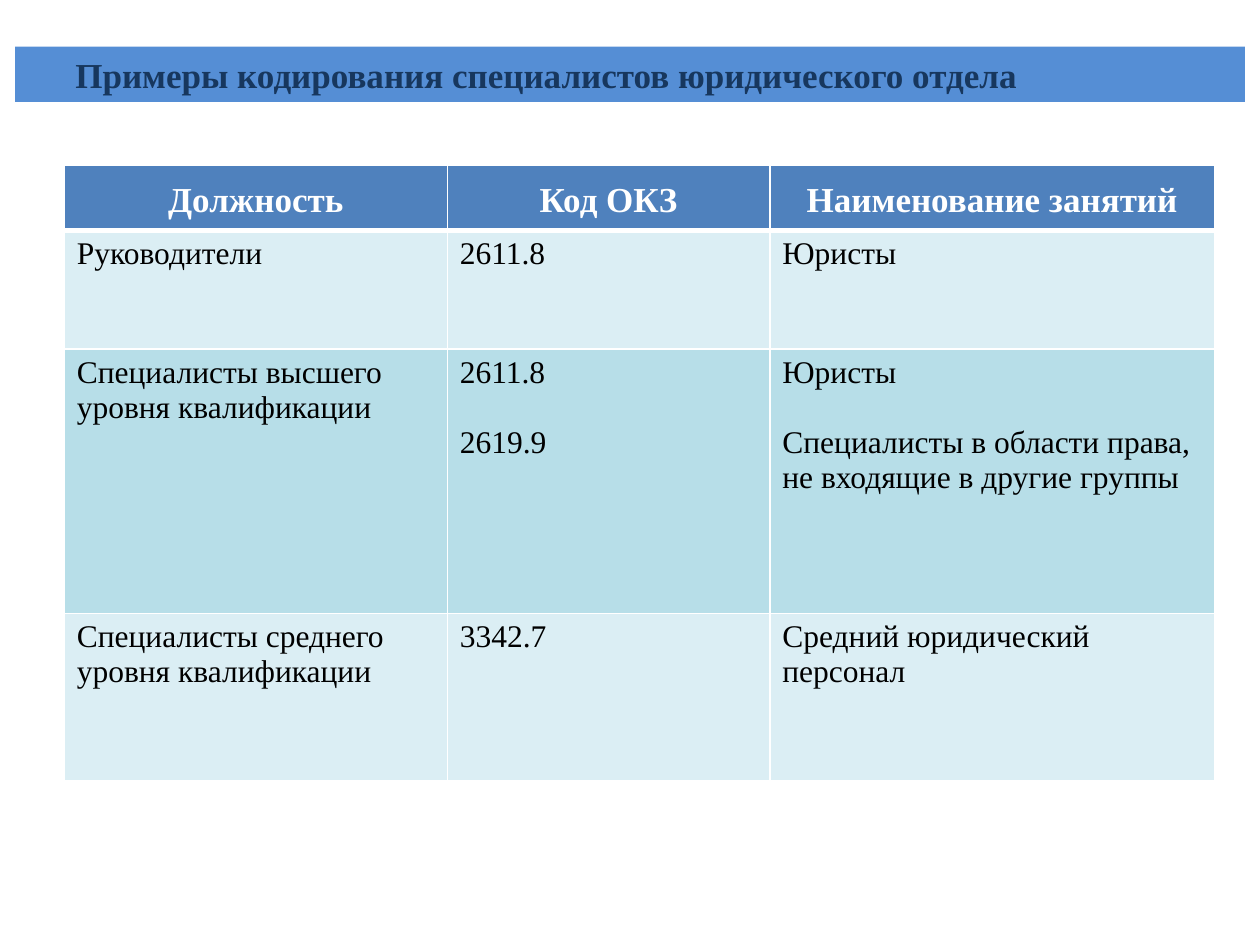
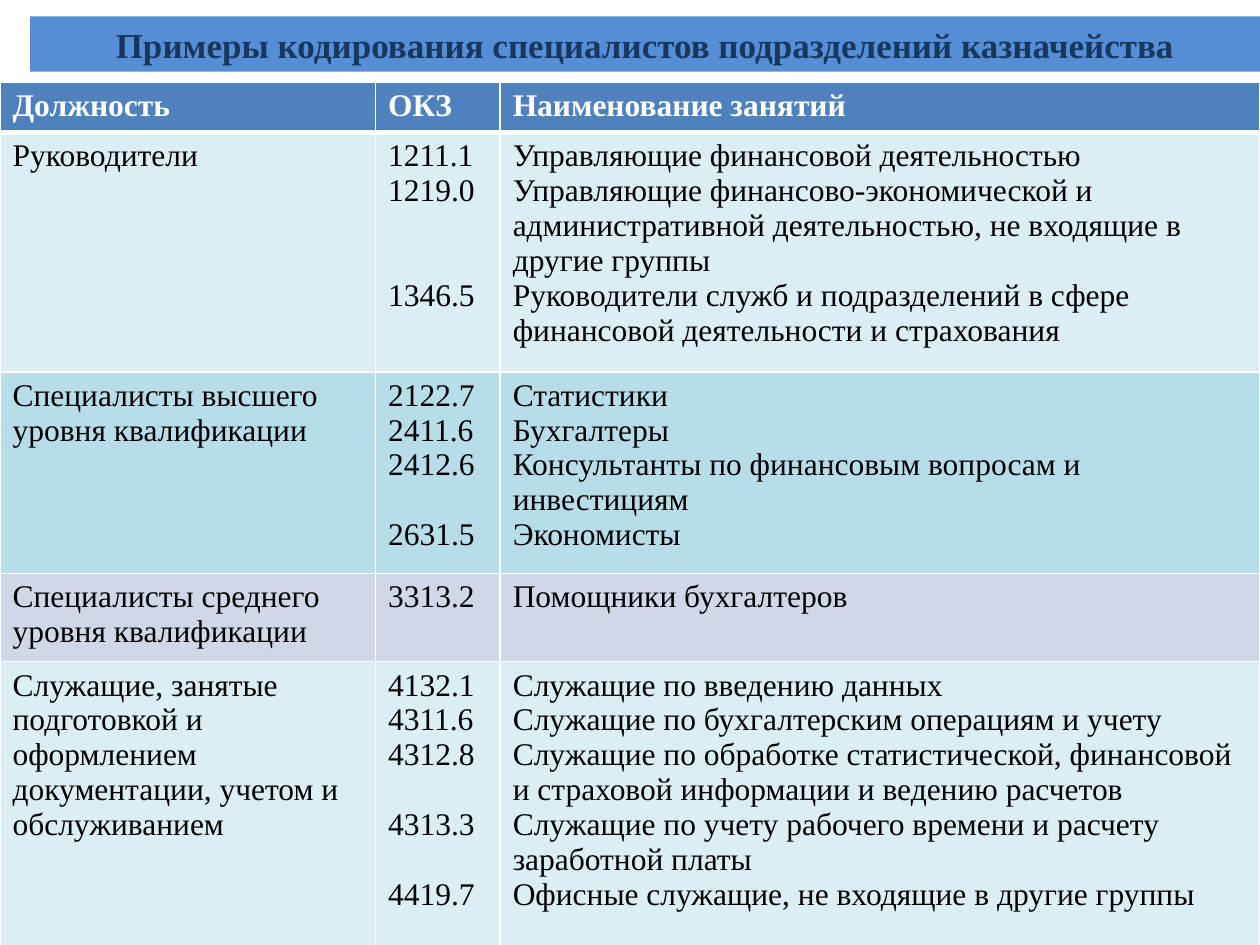
from lxml.etree import SubElement
from pptx import Presentation
from pptx.dml.color import RGBColor
from pptx.enum.shapes import MSO_SHAPE as Shape
from pptx.enum.text import MSO_ANCHOR as Anchor, MSO_AUTO_SIZE as AutoSize, PP_ALIGN as Align
from pptx.oxml.ns import qn
from pptx.util import Inches, Pt

FONT = "Times New Roman"
BAND, BAND_TEXT = "558ED5", "17375E"
HEADER, WHITE, BLACK = "4F81BD", "FFFFFF", "000000"
PALE, TEAL, LILAC = "DBEEF4", "B7DEE8", "D0D8E8"
BAND_SIZE = (9.76, 0.44)
LINE = 20  # height of one text line in points


def color(hex_code):
    return RGBColor.from_string(hex_code)


def write(frame, text, size, hex_code, bold=False):
    """One paragraph per line; an empty line becomes space before the next."""
    skipped, started = 0, False
    for line in text.split("\n"):
        if not line:
            skipped += 1
            continue
        para = frame.add_paragraph() if started else frame.paragraphs[0]
        para.text = line
        para.font.name, para.font.size, para.font.bold = FONT, Pt(size), bold
        para.font.color.rgb = color(hex_code)
        if skipped:
            para.space_before = Pt(LINE * skipped)
        skipped, started = 0, True


HIGHER = "Специалисты высшего уровня квалификации"
MIDDLE = "Специалисты среднего уровня квалификации"

slides = [
    {
        "title": "Примеры кодирования специалистов юридического отдела",
        "band_at": (0.12, 0.37), "title_indent": 0.38,
        "table_at": (0.51, 1.31), "centred_header": True, "header_size": 20,
        "columns": [3.04, 2.56, 3.53], "rows": [0.52, 0.94, 2.1, 1.33],
        "fills": [HEADER, PALE, TEAL, PALE],
        "cells": [
            ("Должность", "Код ОКЗ", "Наименование занятий"),
            ("Руководители", "2611.8", "Юристы"),
            (HIGHER, "2611.8\n\n2619.9",
             "Юристы\n\nСпециалисты в области права, не входящие в другие группы"),
            (MIDDLE, "3342.7", "Средний юридический персонал"),
        ],
    },
    {
        "title": "Примеры кодирования специалистов подразделений казначейства",
        "band_at": (0.24, 0.13), "title_indent": None,
        "table_at": (0, 0.65), "centred_header": False, "header_size": 18,
        "columns": [2.98, 0.99, 6.03], "rows": [0.39, 1.86, 1.56, 0.68, 2.26],
        "fills": [HEADER, PALE, TEAL, LILAC, PALE],
        "cells": [
            ("Должность", "ОКЗ", "Наименование занятий"),
            ("Руководители", "1211.1\n1219.0\n\n\n1346.5",
             "Управляющие финансовой деятельностью\n"
             "Управляющие финансово-экономической и административной деятельностью, "
             "не входящие в другие группы\n"
             "Руководители служб и подразделений в сфере финансовой деятельности "
             "и страхования"),
            (HIGHER, "2122.7\n2411.6\n2412.6\n\n2631.5",
             "Статистики\nБухгалтеры\n"
             "Консультанты по финансовым вопросам и инвестициям\nЭкономисты"),
            (MIDDLE, "3313.2", "Помощники бухгалтеров"),
            ("Служащие, занятые подготовкой и оформлением документации, "
             "учетом и обслуживанием",
             "4132.1\n4311.6\n4312.8\n\n4313.3\n\n4419.7",
             "Служащие по введению данных\n"
             "Служащие по бухгалтерским операциям и учету\n"
             "Служащие по обработке статистической, финансовой и страховой информации "
             "и ведению расчетов\n"
             "Служащие по учету рабочего времени и расчету заработной платы\n"
             "Офисные служащие, не входящие в другие группы"),
        ],
    },
]

deck = Presentation()
deck.slide_width, deck.slide_height = Inches(10), Inches(7.5)

for content in slides:
    page = deck.slides.add_slide(deck.slide_layouts[6])

    # Table with its grid
    columns, rows = content["columns"], content["rows"]
    place = (*content["table_at"], sum(columns), sum(rows))
    table = page.shapes.add_table(len(rows), len(columns), *map(Inches, place)).table
    for column, width in zip(table.columns, columns):
        column.width = Inches(width)
    for row, height in zip(table.rows, rows):
        row.height = Inches(height)

    # Cells: fill, white borders, text
    for r, texts in enumerate(content["cells"]):
        is_header = r == 0
        for c, text in enumerate(texts):
            cell = table.cell(r, c)
            properties = cell._tc.get_or_add_tcPr()
            for side in "LRTB":
                thick = (is_header and side == "B") or (r == 1 and side == "T")
                border = SubElement(properties, qn(f"a:ln{side}"), w=str(Pt(3 if thick else 1)))
                paint = SubElement(border, qn("a:solidFill"))
                SubElement(paint, qn("a:srgbClr"), val=WHITE)
            cell.fill.solid()
            cell.fill.fore_color.rgb = color(content["fills"][r])
            if is_header:
                write(cell.text_frame, text, content["header_size"], WHITE, bold=True)
            else:
                write(cell.text_frame, text, 18, BLACK)
            if is_header and content["centred_header"]:
                cell.vertical_anchor = Anchor.MIDDLE
                cell.margin_left = cell.margin_right = Inches(0.01)
                cell.margin_top = cell.margin_bottom = Inches(0.01)
                para = cell.text_frame.paragraphs[0]
                para.alignment = Align.CENTER
                para.line_spacing, para.space_after = 1.15, Pt(10)

    # Title band
    band = page.shapes.add_shape(
        Shape.RECTANGLE, *map(Inches, content["band_at"] + BAND_SIZE))
    band.shadow.inherit = False
    band.fill.solid()
    band.fill.fore_color.rgb = color(BAND)
    band.line.fill.background()
    frame = band.text_frame
    frame.word_wrap, frame.auto_size = True, AutoSize.SHAPE_TO_FIT_TEXT
    frame.vertical_anchor = Anchor.MIDDLE
    write(frame, content["title"], 20, BAND_TEXT, bold=True)
    title = frame.paragraphs[0]
    if content["title_indent"]:
        title.alignment = Align.LEFT
        title._p.get_or_add_pPr().set("indent", str(Inches(content["title_indent"])))
    else:
        title.alignment = Align.CENTER

deck.save("out.pptx")
